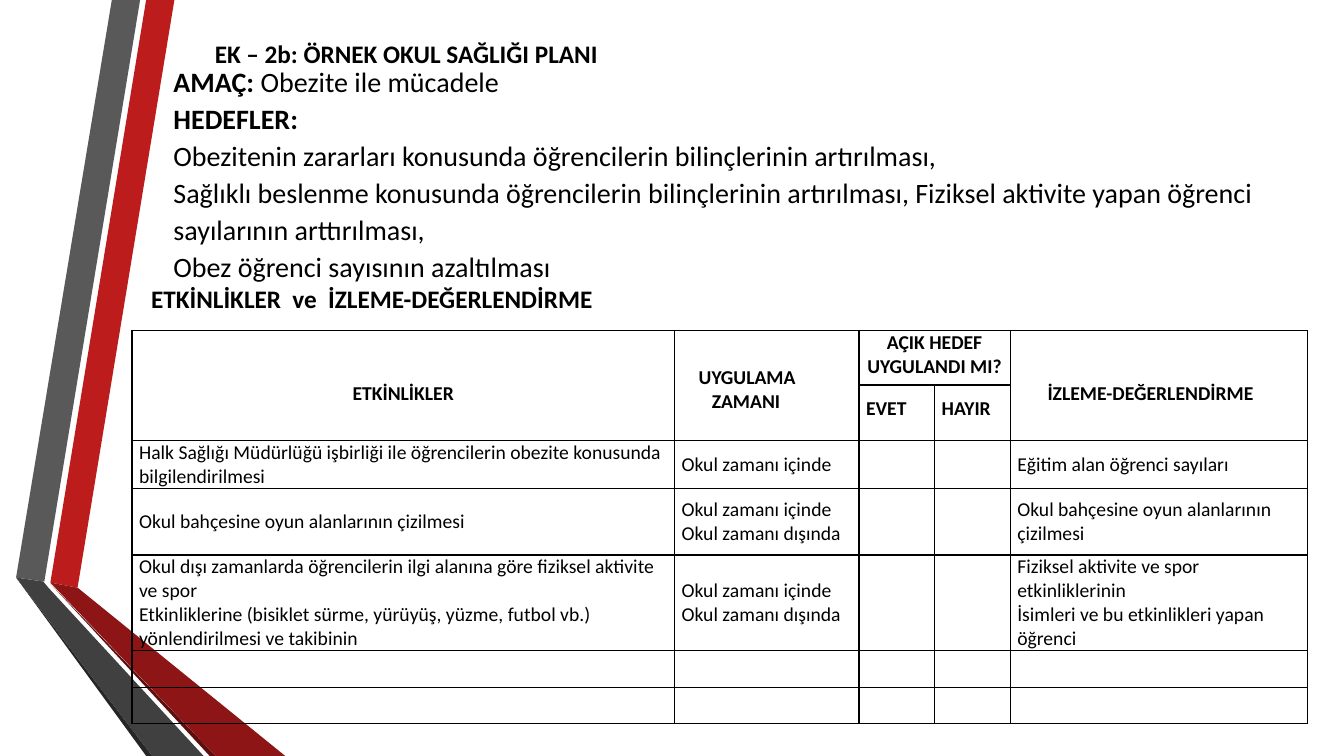
from lxml import etree
from pptx import Presentation
from pptx.dml.color import RGBColor
from pptx.enum.text import MSO_ANCHOR, MSO_AUTO_SIZE, PP_ALIGN
from pptx.oxml.ns import qn
from pptx.util import Pt

LEFT, CENTER = PP_ALIGN.LEFT, PP_ALIGN.CENTER
TOP, MIDDLE = MSO_ANCHOR.TOP, MSO_ANCHOR.MIDDLE
FIXED = MSO_AUTO_SIZE.NONE
PX = 9144  # 100 px to the inch
FONT = "Calibri"
COLORS = {
    "red": "BC1C1C", "gray": "595959", "ink": "262626", "wine": "5E0E0E",
    "dark red": "8D1515", "dark gray": "404040", "text": "000000",
}


def add_run(para, text, size, bold=False):
    run = para.add_run()
    run.text = text
    run.font.name = FONT
    run.font.size = Pt(size)
    run.font.bold = bold
    run.font.color.rgb = RGBColor.from_string(COLORS["text"])


def place(shape, x, y, w, h, anchor):
    shape.left, shape.top, shape.width, shape.height = x * PX, y * PX, w * PX, h * PX
    frame = shape.text_frame
    frame.word_wrap = True
    frame.auto_size = FIXED
    frame.vertical_anchor = anchor
    return frame


deck = Presentation()
deck.slide_width, deck.slide_height = 1333 * PX, 750 * PX
slide = deck.slides.add_slide(deck.slide_layouts[1])
title, body = slide.placeholders

# Folded ribbons on the left
ribbons = [
    ("red", [(50, 578), (77, 583), (173, 0), (145, 0)]),
    ("gray", [(139, 0), (111, 0), (16, 573), (44, 577)]),
    ("ink", [(16, 573), (145, 750), (151, 750)]),
    ("wine", [(50, 579), (208, 750), (214, 750)]),
    ("dark red", [(50, 578), (214, 750), (283, 750), (77, 583)]),
    ("dark gray", [(202, 750), (48, 583), (43, 577), (16, 573), (151, 750)]),
]
for color, points in ribbons:
    path = slide.shapes.build_freeform(*points[0], scale=PX)
    path.add_line_segments(points[1:], close=True)
    ribbon = path.convert_to_shape()
    ribbon.shadow.inherit = False
    ribbon.fill.solid()
    ribbon.fill.fore_color.rgb = RGBColor.from_string(COLORS[color])
    ribbon.line.fill.background()

# Headings
label = slide.shapes.add_textbox(0, 0, PX, PX)
headings = [
    (title, 203, 33, 910, "EK – 2b: ÖRNEK OKUL SAĞLIĞI PLANI"),
    (label, 140, 276, 826, "ETKİNLİKLER  ve  İZLEME-DEĞERLENDİRME"),
]
for shape, x, y, w, text in headings:
    para = place(shape, x, y, w, 40, TOP).paragraphs[0]
    para.alignment = LEFT
    add_run(para, text, 18, True)

# Aim and goals
goals = [
    [("AMAÇ: ", True), ("Obezite ile mücadele", False)],
    [("HEDEFLER:", True)],
    [("Obezitenin zararları konusunda öğrencilerin bilinçlerinin artırılması,", False)],
    [("Sağlıklı beslenme konusunda öğrencilerin bilinçlerinin artırılması, "
      "Fiziksel aktivite yapan öğrenci sayılarının arttırılması,", False)],
    [("Obez öğrenci sayısının azaltılması", False)],
]
frame = place(body, 162, 74, 1096, 234, MIDDLE)
frame.margin_bottom = 45 * PX
for i, goal in enumerate(goals):
    para = frame.paragraphs[0] if i == 0 else frame.add_paragraph()
    para.line_spacing = 1.1
    para.space_before = para.space_after = Pt(0)
    props = para._p.get_or_add_pPr()
    props.set("marL", "0")
    props.set("indent", "0")
    etree.SubElement(props, qn("a:buNone"))
    for text, bold in goal:
        add_run(para, text, 20, bold)

# Table grid
widths = [538, 183, 75, 75, 295]
heights = [54, 54, 47, 66, 95, 36, 36]
holder = slide.shapes.add_table(
    len(heights), len(widths), 131 * PX, 328 * PX, sum(widths) * PX, sum(heights) * PX)
table = holder.table
table.first_row = table.horz_banding = False
for col, w in zip(table.columns, widths):
    col.width = w * PX
for row, h in zip(table.rows, heights):
    row.height = h * PX
for cell in table.iter_cells():
    cell.margin_left = cell.margin_right = cell.margin_top = cell.margin_bottom = 0
    cell.vertical_anchor = MIDDLE
    cell.fill.background()
    props = cell._tc.get_or_add_tcPr()
    for i, side in enumerate(["lnL", "lnR", "lnT", "lnB"]):
        line = etree.Element(qn("a:" + side), w=str(Pt(1)))
        fill = etree.SubElement(line, qn("a:solidFill"))
        etree.SubElement(fill, qn("a:srgbClr"), val=COLORS["text"])
        props.insert(i, line)
for first, last in [((0, 0), (1, 0)), ((0, 1), (1, 1)), ((0, 2), (0, 3)), ((0, 4), (1, 4))]:
    table.cell(*first).merge(table.cell(*last))

# Header cells: row, column, lines, alignment, left, top and bottom margin
heads = [
    (0, 0, ["ETKİNLİKLER"], CENTER, 0, 16, 0),
    (0, 1, ["UYGULAMA ZAMANI"], LEFT, 0, 8, 0),
    (0, 2, ["AÇIK HEDEF", "UYGULANDI MI?"], CENTER, 0, 0, 6),
    (0, 4, ["İZLEME-DEĞERLENDİRME"], LEFT, 37, 16, 0),
    (1, 2, ["EVET"], LEFT, 7, 0, 8),
    (1, 3, ["HAYIR"], LEFT, 7, 0, 8),
]

# Activity rows
during, outside = "Okul zamanı içinde", "Okul zamanı dışında"
plans = [
    (["Halk Sağlığı Müdürlüğü işbirliği ile öğrencilerin obezite konusunda bilgilendirilmesi"],
     [during], ["Eğitim alan öğrenci sayıları"]),
    (["Okul bahçesine oyun alanlarının çizilmesi"],
     [during, outside], ["Okul bahçesine oyun alanlarının çizilmesi"]),
    (["Okul dışı zamanlarda öğrencilerin ilgi alanına göre fiziksel aktivite ve spor",
      "Etkinliklerine (bisiklet sürme, yürüyüş, yüzme, futbol vb.) "
      "yönlendirilmesi ve takibinin"],
     [during, outside],
     ["Fiziksel aktivite ve spor etkinliklerinin",
      "İsimleri ve bu etkinlikleri yapan öğrenci"]),
]
entries = [(r, c, lines, LEFT, 7, 0, 0)
           for r, plan in enumerate(plans, 2) for c, lines in zip((0, 1, 4), plan)]

# Table text
for r, c, lines, align, left, top, bottom in heads + entries:
    cell = table.cell(r, c)
    cell.margin_left, cell.margin_top, cell.margin_bottom = left * PX, top * PX, bottom * PX
    if c == 4 and r > 1:
        cell.margin_right = 25 * PX
    for i, text in enumerate(lines):
        para = cell.text_frame.paragraphs[0] if i == 0 else cell.text_frame.add_paragraph()
        para.alignment = align
        add_run(para, text, 14, r < 2)

# Hanging indent that steps the second line of the time header
props = table.cell(0, 1).text_frame.paragraphs[0]._p.get_or_add_pPr()
props.set("marL", str(37 * PX))
props.set("indent", str(-13 * PX))

deck.save("out.pptx")
